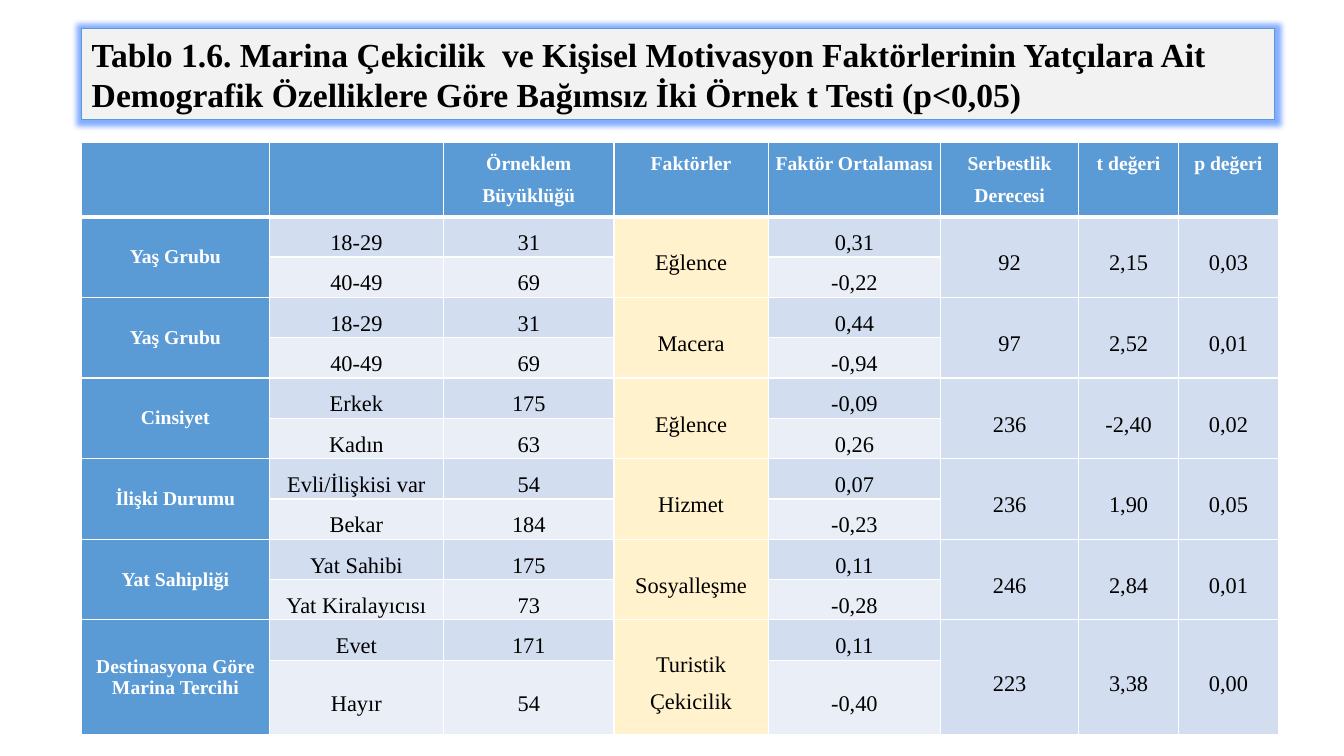
from lxml import etree
from pptx import Presentation
from pptx import util as u
from pptx.dml.color import RGBColor
from pptx.enum import text
from pptx.oxml import ns

BLUE, PALE, LIGHT, CREAM = "5B9BD5", "D2DEEF", "EAEFF7", "FFF2CC"
WHITE, BLACK, GREY, GLOW = "FFFFFF", "000000", "F2F2F2", "6699FF"

TITLE = ("Tablo 1.6. Marina Çekicilik  ve Kişisel Motivasyon Faktörlerinin Yatçılara Ait "
         "Demografik Özelliklere Göre Bağımsız İki Örnek t Testi (p<0,05)")
HEADERS = ["", "", "Örneklem Büyüklüğü", "Faktörler", "Faktör Ortalaması",
           "Serbestlik Derecesi", "t değeri", "p değeri"]
TESTS = [
    ("Yaş Grubu", ("18-29", "40-49"), ("31", "69"), "Eğlence", ("0,31", "-0,22"), "92", "2,15", "0,03"),
    ("Yaş Grubu", ("18-29", "40-49"), ("31", "69"), "Macera", ("0,44", "-0,94"), "97", "2,52", "0,01"),
    ("Cinsiyet", ("Erkek", "Kadın"), ("175", "63"), "Eğlence", ("-0,09", "0,26"), "236", "-2,40", "0,02"),
    ("İlişki Durumu", ("Evli/İlişkisi var", "Bekar"), ("54", "184"), "Hizmet", ("0,07", "-0,23"),
     "236", "1,90", "0,05"),
    ("Yat Sahipliği", ("Yat Sahibi", "Yat Kiralayıcısı"), ("175", "73"), "Sosyalleşme", ("0,11", "-0,28"),
     "246", "2,84", "0,01"),
    ("Destinasyona Göre Marina Tercihi", ("Evet", "Hayır"), ("171", "54"), "Turistik Çekicilik",
     ("0,11", "-0,40"), "223", "3,38", "0,00"),
]
COL_WIDTHS = [1.86, 1.73, 1.69, 1.53, 1.71, 1.37, 0.99, 0.99]
ROW_HEIGHTS = [0.74] + [0.4] * (2 * len(TESTS) - 1) + [0.74]


def rgb(value):
    return RGBColor.from_string(value)


def apply(obj, values):
    for name, value in values.items():
        setattr(obj, name, value)


class Deck:
    """Holds the table style and the current slide."""

    font = "Times New Roman"
    label = {"size": u.Pt(14), "bold": True}
    body = {"size": u.Pt(16), "bold": False}
    cell_box = {"margin_left": u.Inches(0.07), "margin_right": u.Inches(0.07),
                "margin_top": 0, "margin_bottom": 0}

    def __init__(self, prs):
        self.slide = prs.slides.add_slide(prs.slide_layouts[5])

    def add_text(self, tf, content, color, font, para):
        p = tf.paragraphs[0]
        apply(p, para)
        r = p.add_run()
        r.text = content
        apply(r.font, {"name": self.font, **font})
        r.font.color.rgb = rgb(color)

    def title(self, content, left, top, width, height):
        sp = self.slide.shapes.title
        apply(sp, {"left": u.Inches(left), "top": u.Inches(top),
                   "width": u.Inches(width), "height": u.Inches(height)})
        sp.fill.solid()
        sp.fill.fore_color.rgb = rgb(GREY)
        sp.line.color.rgb = rgb(BLUE)
        sp.line.width = u.Pt(0.75)
        effects = etree.SubElement(sp._element.spPr, ns.qn("a:effectLst"))
        glow = etree.SubElement(effects, ns.qn("a:glow"), rad=str(u.Pt(8)))
        color = etree.SubElement(glow, ns.qn("a:srgbClr"), val=GLOW)
        etree.SubElement(color, ns.qn("a:alpha"), val="80000")
        apply(sp.text_frame, {"word_wrap": True, "auto_size": text.MSO_AUTO_SIZE.SHAPE_TO_FIT_TEXT,
                              "vertical_anchor": text.MSO_ANCHOR.MIDDLE})
        self.add_text(sp.text_frame, content, BLACK, {"size": u.Pt(24), "bold": True},
                      {"alignment": text.PP_ALIGN.LEFT, "line_spacing": 1.0, "space_before": 0})

    def table(self, left, top, widths, heights):
        tbl = self.slide.shapes.add_table(
            len(heights), len(widths), u.Inches(left), u.Inches(top),
            u.Inches(sum(widths)), u.Inches(sum(heights))).table
        for col, width in zip(tbl.columns, widths):
            col.width = u.Inches(width)
        for row, height in zip(tbl.rows, heights):
            row.height = u.Inches(height)
        return tbl

    def borders(self, cell, top, bottom):
        tcPr = cell._tc.get_or_add_tcPr()
        for side, width in (("L", 1), ("R", 1), ("T", top), ("B", bottom)):
            ln = etree.SubElement(tcPr, ns.qn(f"a:ln{side}"), w=str(u.Pt(width)))
            fill = etree.SubElement(ln, ns.qn("a:solidFill"))
            etree.SubElement(fill, ns.qn("a:srgbClr"), val=WHITE)

    def cell(self, tbl, row, col, content, fill, color, font, spacing=1.5, span=1):
        for i in range(row, row + span):
            part = tbl.cell(i, col)
            self.borders(part, 3 if i == 1 else 1, 3 if i == 0 else 1)
            part.fill.solid()
            part.fill.fore_color.rgb = rgb(fill)
        cell = tbl.cell(row, col)
        if span > 1:
            cell.merge(tbl.cell(row + span - 1, col))
        anchor = text.MSO_ANCHOR.MIDDLE if row else text.MSO_ANCHOR.TOP
        apply(cell, {**self.cell_box, "vertical_anchor": anchor})
        if content:
            self.add_text(cell.text_frame, content, color, font,
                          {"alignment": text.PP_ALIGN.CENTER, "line_spacing": spacing,
                           "space_after": u.Pt(8)})


def main():
    prs = Presentation()
    apply(prs, {"slide_width": u.Inches(13.33), "slide_height": u.Inches(7.5)})
    deck = Deck(prs)
    deck.title(TITLE, 0.81, 0.28, 11.83, 0.91)
    tbl = deck.table(0.81, 1.41, COL_WIDTHS, ROW_HEIGHTS)
    for col, header in enumerate(HEADERS):
        deck.cell(tbl, 0, col, header, BLUE, WHITE, deck.label)
    for n, test in enumerate(TESTS):
        row = 1 + 2 * n
        for col, value in enumerate(test):
            if isinstance(value, tuple):
                for i, (content, fill) in enumerate(zip(value, (PALE, LIGHT))):
                    deck.cell(tbl, row + i, col, content, fill, BLACK, deck.body)
            elif col == 0:
                deck.cell(tbl, row, col, value, BLUE, WHITE, deck.label, spacing=1.0, span=2)
            else:
                fill = CREAM if HEADERS[col] == "Faktörler" else PALE
                deck.cell(tbl, row, col, value, fill, BLACK, deck.body, span=2)
    prs.save("out.pptx")


if __name__ == "__main__":
    main()
